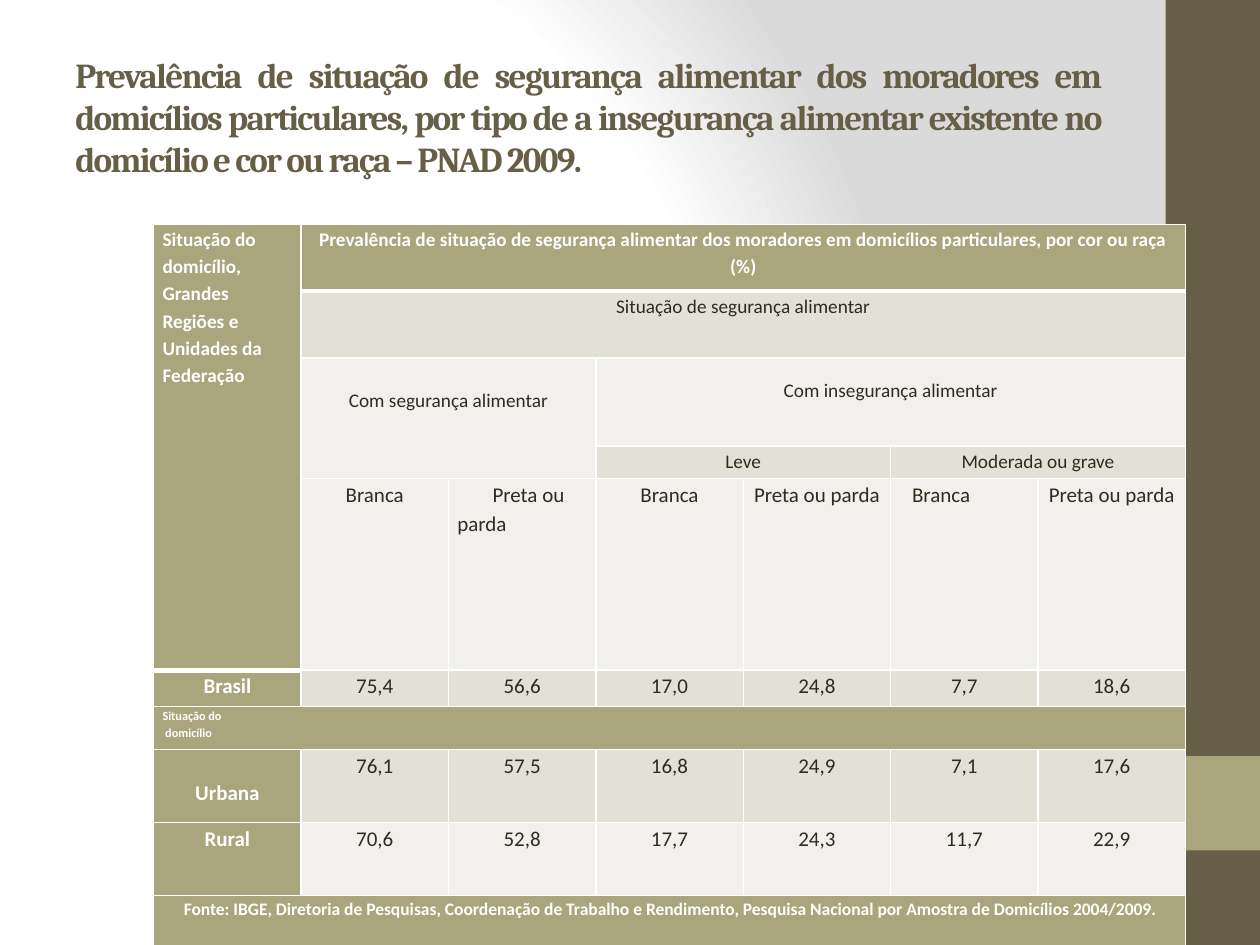
import pptx
import pptx.dml.color
import pptx.enum.shapes
import pptx.enum.text
import pptx.oxml
import pptx.oxml.ns
import pptx.util
from lxml import etree

Inches = pptx.util.Inches
Pt = pptx.util.Pt
RGBColor = pptx.dml.color.RGBColor
ALIGN = pptx.enum.text.PP_ALIGN

BROWN = RGBColor(0x67, 0x5E, 0x47)
OLIVE = RGBColor(0xA9, 0xA5, 0x7C)
BAND = RGBColor(0xE2, 0xE1, 0xD7)
PALE = RGBColor(0xF1, 0xF0, 0xEC)
WHITE = RGBColor(0xFF, 0xFF, 0xFF)
GREY = RGBColor(0xDA, 0xDA, 0xDA)
INK = RGBColor(0x2F, 0x2B, 0x20)

TITLE = (
    "Prevalência de situação de segurança alimentar dos moradores em "
    "domicílios particulares, por tipo de a insegurança alimentar existente "
    "no domicílio e cor ou raça – PNAD 2009."
)
COLUMN_COUNT = 7
ROW_HEIGHTS = [0.53, 0.53, 0.7, 0.26, 1.52, 0.29, 0.34, 0.58, 0.58, 0.51]
HEADER_BOTTOMS = [(4, 0)] + [(0, column) for column in range(1, COLUMN_COUNT)]

# Rows of figures: table row, label, values, fill, space above the label
FIGURES = [
    (5, "Brasil", ["75,4", "56,6", "17,0", "24,8", "7,7", "18,6"], BAND, 0),
    (7, "Urbana", ["76,1", "57,5", "16,8", "24,9", "7,1", "17,6"], BAND, 0.22),
    (8, "Rural", ["70,6", "52,8", "17,7", "24,3", "11,7", "22,9"], PALE, 0),
]


def set_values(target, values):
    for name, value in values.items():
        setattr(target, name, value)


def set_background(slide):
    stops = "".join(
        f'<a:gs pos="{position}"><a:srgbClr val="{color}"/></a:gs>'
        for position, color in ((0, WHITE), (75000, WHITE), (100000, GREY))
    )
    background = pptx.oxml.parse_xml(
        f'<p:bg {pptx.oxml.ns.nsdecls("p", "a")}><p:bgPr><a:gradFill>'
        f'<a:gsLst>{stops}</a:gsLst><a:path path="circle">'
        '<a:fillToRect l="20000" t="50000" r="100000" b="50000"/></a:path>'
        '</a:gradFill><a:effectLst/></p:bgPr></p:bg>'
    )
    slide.element.cSld.insert(0, background)


def add_band(slide, top, height, color):
    shape = slide.shapes.add_shape(
        pptx.enum.shapes.MSO_SHAPE.RECTANGLE,
        Inches(9.25), Inches(top), Inches(0.75), Inches(height))
    shape.shadow.inherit = False
    shape.fill.solid()
    shape.fill.fore_color.rgb = color
    shape.line.fill.background()


def format_run(run, name, size, bold, color):
    set_values(run.font, {"name": name, "size": Pt(size), "bold": bold})
    run.font.color.rgb = color


def add_title(slide):
    shape = slide.shapes.add_textbox(
        Inches(0.5), Inches(0.3), Inches(8.33), Inches(1.25))
    set_values(shape.text_frame, {
        "word_wrap": True,
        "vertical_anchor": pptx.enum.text.MSO_ANCHOR.MIDDLE,
    })
    paragraph = shape.text_frame.paragraphs[0]
    paragraph.alignment = ALIGN.JUSTIFY
    run = paragraph.add_run()
    run.text = TITLE
    format_run(run, "Cambria", 20, True, BROWN)
    run.font._element.set("spc", "-100")


def add_borders(cell, top, bottom):
    properties = cell._tc.get_or_add_tcPr()
    for side, width in (("L", 1), ("R", 1), ("T", top), ("B", bottom)):
        line = etree.SubElement(
            properties, pptx.oxml.ns.qn(f"a:ln{side}"), w=str(Pt(width)))
        fill = etree.SubElement(line, pptx.oxml.ns.qn("a:solidFill"))
        etree.SubElement(fill, pptx.oxml.ns.qn("a:srgbClr"), val=str(WHITE))


def add_grid(slide):
    frame = slide.shapes.add_table(
        len(ROW_HEIGHTS), COLUMN_COUNT, Inches(1.22), Inches(1.78),
        Inches(8.19), Inches(sum(ROW_HEIGHTS)))
    table = frame.table
    set_values(table, {"first_row": False, "horz_banding": False})
    for row, height in zip(table.rows, ROW_HEIGHTS):
        row.height = Inches(height)
    for row in range(len(ROW_HEIGHTS)):
        for column in range(COLUMN_COUNT):
            cell = table.cell(row, column)
            set_values(cell, {
                "margin_left": Inches(0.07), "margin_right": Inches(0.07),
                "margin_top": 0, "margin_bottom": 0,
            })
            add_borders(
                cell,
                3 if (row - 1, column) in HEADER_BOTTOMS else 1,
                3 if (row, column) in HEADER_BOTTOMS else 1)
            cell.fill.solid()
            cell.fill.fore_color.rgb = OLIVE
            # Keep cells hidden by a merge from stretching their row
            etree.SubElement(cell.text_frame.paragraphs[0]._p,
                             pptx.oxml.ns.qn("a:endParaRPr"), sz="700")
    return table


def fill_cell(table, row, column, text, fill=OLIVE, size=11, span=(1, 1),
              align=ALIGN.CENTER, space_above=0, indent=0):
    cell = table.cell(row, column)
    if span != (1, 1):
        cell.merge(table.cell(row + span[0] - 1, column + span[1] - 1))
    cell.fill.fore_color.rgb = fill
    cell.margin_top = Inches(space_above)
    is_heading = fill == OLIVE
    for index, line in enumerate(text.split("\n")):
        frame = cell.text_frame
        paragraph = frame.add_paragraph() if index else frame.paragraphs[0]
        set_values(paragraph, {"alignment": align, "line_spacing": 1.15})
        if indent:
            paragraph._p.get_or_add_pPr().set("indent", str(Inches(indent)))
        run = paragraph.add_run()
        run.text = line
        format_run(run, "Calibri", size, is_heading,
                   WHITE if is_heading else INK)


def fill_headings(table):
    fill_cell(table, 0, 0, "Situação do domicílio,\nGrandes Regiões e\n"
              "Unidades da Federação", span=(5, 1), align=ALIGN.LEFT)
    fill_cell(table, 0, 1, "Prevalência de situação de segurança alimentar dos "
              "moradores em domicílios particulares, por cor ou raça (%)",
              span=(1, 6))
    fill_cell(table, 1, 1, "Situação de segurança alimentar", BAND, span=(1, 6))
    fill_cell(table, 2, 1, "Com segurança alimentar", PALE, span=(2, 2),
              space_above=0.22)
    fill_cell(table, 2, 3, "Com insegurança alimentar", PALE, span=(1, 4),
              space_above=0.14)
    fill_cell(table, 3, 3, "Leve", BAND, span=(1, 2))
    fill_cell(table, 3, 5, "Moderada ou grave", BAND, span=(1, 2))

    # Colour or race, with a first-line indent in two of the columns
    indents = {2: 0.28, 5: 0.1}
    for column in range(1, COLUMN_COUNT):
        fill_cell(table, 4, column,
                  "Branca" if column % 2 else "Preta ou parda", PALE, 12,
                  align=ALIGN.LEFT if column in indents else ALIGN.CENTER,
                  indent=indents.get(column, 0))


def fill_figures(table):
    for row, label, values, fill, space_above in FIGURES:
        fill_cell(table, row, 0, label, size=12, space_above=space_above)
        for column, value in enumerate(values, start=1):
            fill_cell(table, row, column, value, fill, 12)
    fill_cell(table, 6, 0, "Situação do\n domicílio", size=7, span=(1, 7),
              align=ALIGN.LEFT)
    fill_cell(table, 9, 0, "Fonte: IBGE, Diretoria de Pesquisas, Coordenação de "
              "Trabalho e Rendimento, Pesquisa Nacional por Amostra de "
              "Domicílios 2004/2009.", size=10, span=(1, 7))


def main():
    presentation = pptx.Presentation()
    set_values(presentation, {
        "slide_width": Inches(10), "slide_height": Inches(7.5)})
    slide = presentation.slides.add_slide(presentation.slide_layouts[6])

    # Background and side bands
    set_background(slide)
    add_band(slide, 0, 7.5, BROWN)
    add_band(slide, 6, 0.75, OLIVE)

    # Title and table
    add_title(slide)
    table = add_grid(slide)
    fill_headings(table)
    fill_figures(table)

    presentation.save("out.pptx")


if __name__ == "__main__":
    main()
